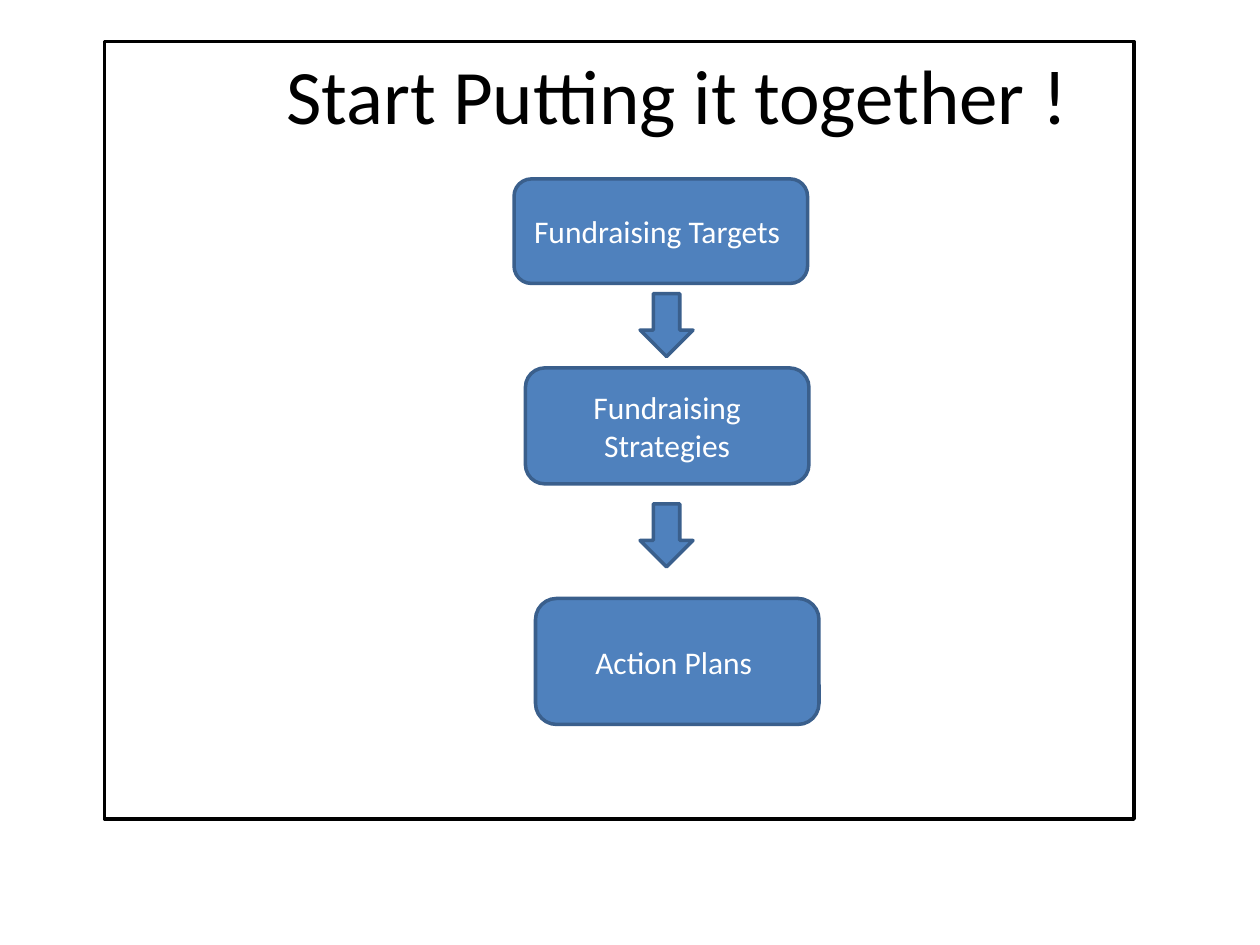
from pptx import Presentation
from pptx.dml.color import RGBColor
from pptx.enum.shapes import MSO_SHAPE
from pptx.enum.text import MSO_ANCHOR, PP_ALIGN
from pptx.util import Inches, Pt


def color(value):
    return RGBColor.from_string(value)


def add_box(kind, x, y, w, h, fill, line, width, text="", size=18, font_color="FFFFFF"):
    sp = s.shapes.add_shape(kind, Inches(x), Inches(y), Inches(w), Inches(h))
    sp.shadow.inherit = False
    if fill:
        sp.fill.solid()
        sp.fill.fore_color.rgb = color(fill)
    else:
        sp.fill.background()
    sp.line.color.rgb = color(line)
    sp.line.width = Pt(width)
    if text:
        tf = sp.text_frame
        tf.word_wrap = True
        tf.vertical_anchor = MSO_ANCHOR.MIDDLE
        p = tf.paragraphs[0]
        p.alignment = PP_ALIGN.CENTER
        r = p.add_run()
        r.text = text
        r.font.name = "Calibri"
        r.font.size = Pt(size)
        r.font.color.rgb = color(font_color)
    return sp


prs = Presentation()
prs.slide_width = Inches(10)
prs.slide_height = Inches(7.5)
s = prs.slides.add_slide(prs.slide_layouts[6])

frame = add_box(MSO_SHAPE.RECTANGLE, 0.83, 0.33, 8.17, 6.17, None, "000000", 2.25,
                "Start Putting it together !", 44, "000000")
frame.text_frame.vertical_anchor = MSO_ANCHOR.TOP
frame.text_frame.margin_left = Inches(1.02)

steps = [
    ("Fundraising Targets ", 4.08, 1.42, 2.33, 0.83),
    ("Fundraising Strategies", 4.17, 2.92, 2.25, 0.92),
    ("Action Plans ", 4.25, 4.75, 2.25, 1),
]
for text, x, y, w, h in steps:
    add_box(MSO_SHAPE.ROUNDED_RECTANGLE, x, y, w, h, "4F81BD", "3A5F8C", 2, text)

for y in (2.33, 4):
    add_box(MSO_SHAPE.DOWN_ARROW, 5.08, y, 0.42, 0.5, "4F81BD", "3A5F8C", 2)

prs.save("out.pptx")
